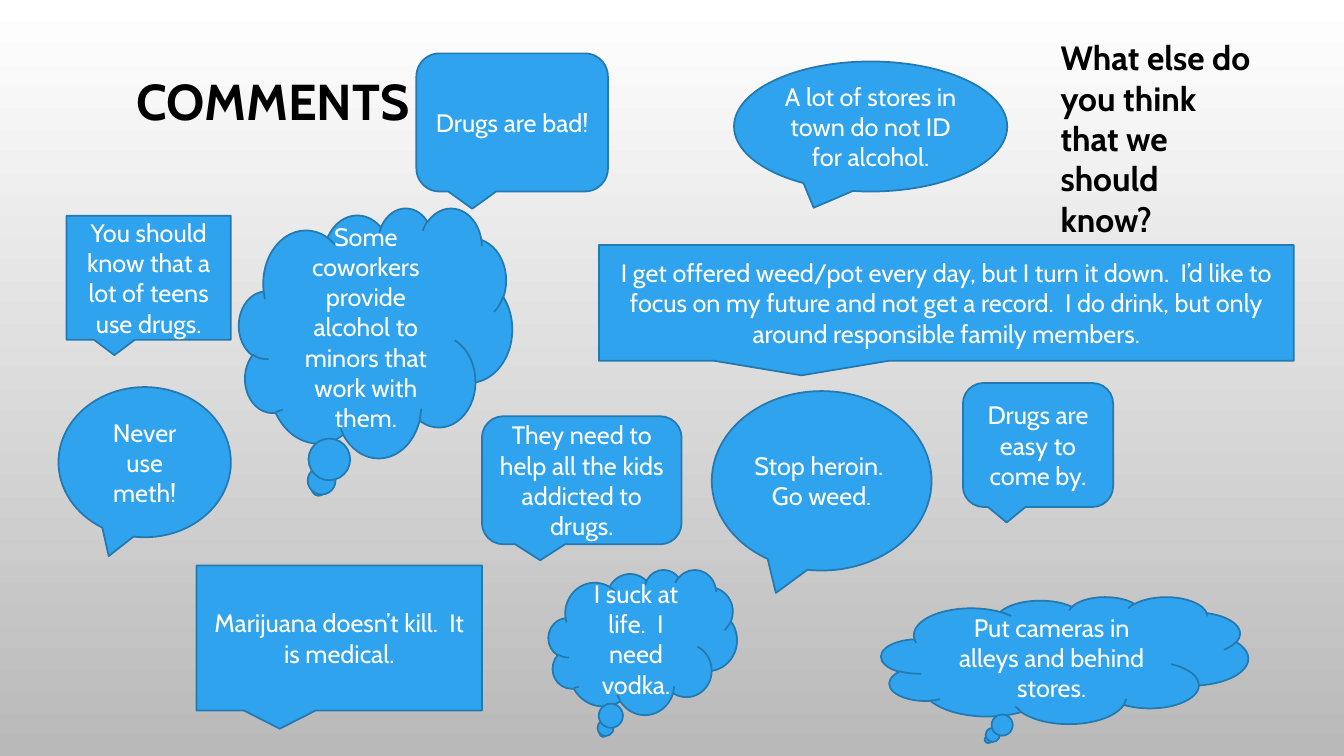
from typing import NamedTuple

import pptx
import pptx.dml.color
import pptx.enum.shapes
import pptx.enum.text
import pptx.util
from pptx.util import Inches

COLORS = {
    "bg_top": "FFFFFF",
    "bg_bottom": "B9B9B9",
    "bubble": "2FA3EE",
    "outline": "2379B0",
    "bubble_text": "FFFFFF",
    "heading": "000000",
}
FONT = "Cabin"

MSO = pptx.enum.shapes.MSO_SHAPE
RECT = MSO.RECTANGULAR_CALLOUT
ROUND = MSO.ROUNDED_RECTANGULAR_CALLOUT
OVAL = MSO.OVAL_CALLOUT
CLOUD = MSO.CLOUD_CALLOUT
ALIGN = pptx.enum.text.PP_ALIGN
ANCHOR = pptx.enum.text.MSO_ANCHOR


class Bubble(NamedTuple):
    kind: MSO
    left: float
    top: float
    width: float
    height: float
    text: str


BUBBLES = [
    Bubble(RECT, 0.66, 2.14, 1.63, 1.23, "You should know that a lot of teens use drugs."),
    Bubble(ROUND, 4.13, 0.53, 1.9, 1.37, "Drugs are bad!"),
    Bubble(OVAL, 7.28, 0.61, 2.71, 1.29, "A lot of stores in town do not ID for alcohol."),
    Bubble(CLOUD, 2.37, 2.06, 2.71, 2.48,
           "Some coworkers provide alcohol to minors that work with them."),
    Bubble(OVAL, 0.58, 3.84, 1.71, 1.49, "Never use meth!"),
    Bubble(RECT, 5.94, 2.43, 6.89, 1.15,
           "I get offered weed/pot every day, but I turn it down.  I’d like to focus on "
           "my future and not get a record.  I do drink, but only around responsible "
           "family members."),
    Bubble(ROUND, 4.78, 4.13, 1.98, 1.27, "They need to help all the kids addicted to drugs."),
    Bubble(CLOUD, 5.44, 5.65, 1.87, 1.44, "I suck at life.  I need vodka."),
    Bubble(OVAL, 7.06, 3.88, 2.18, 1.78, "Stop heroin.  Go weed."),
    Bubble(RECT, 1.95, 5.61, 2.83, 1.44, "Marijuana doesn’t kill.  It is medical."),
    Bubble(ROUND, 9.55, 3.8, 1.49, 1.23, "Drugs are easy to come by."),
    Bubble(CLOUD, 8.74, 5.92, 3.64, 1.26, "Put cameras in alleys and behind stores."),
]


def rgb(name: str) -> pptx.dml.color.RGBColor:
    return pptx.dml.color.RGBColor.from_string(COLORS[name])


def write(sp, text: str, size: int, color: str, align: ALIGN, anchor: ANCHOR,
          bold: bool = False):
    """Fill a shape with one wrapped paragraph and return the paragraph."""
    tf = sp.text_frame
    tf.word_wrap = True
    tf.auto_size = pptx.enum.text.MSO_AUTO_SIZE.NONE
    tf.vertical_anchor = anchor
    p = tf.paragraphs[0]
    p.text = text
    p.alignment = align
    p.font.name = FONT
    p.font.size = pptx.util.Pt(size)
    p.font.bold = bold
    p.font.color.rgb = rgb(color)
    return p


def add_bubble(slide, b: Bubble) -> None:
    sp = slide.shapes.add_shape(b.kind, Inches(b.left), Inches(b.top),
                                Inches(b.width), Inches(b.height))
    sp.shadow.inherit = False
    sp.fill.solid()
    sp.fill.fore_color.rgb = rgb("bubble")
    sp.line.color.rgb = rgb("outline")
    sp.line.width = pptx.util.Pt(1.25)
    write(sp, b.text, 18, "bubble_text", ALIGN.CENTER, ANCHOR.MIDDLE)


def set_background(slide) -> None:
    fill = slide.background.fill
    fill.gradient()
    fill.gradient_angle = 270  # counter-clockwise, so top to bottom
    for stop, name in zip(fill.gradient_stops, ("bg_top", "bg_bottom")):
        stop.color.rgb = rgb(name)


def main() -> None:
    prs = pptx.Presentation()
    prs.slide_width = Inches(13.33)
    prs.slide_height = Inches(7.5)
    slide = prs.slides.add_slide(prs.slide_layouts[5])
    set_background(slide)

    title = slide.shapes.title
    title.left, title.top = Inches(0.84), Inches(0.53)
    title.width, title.height = Inches(3.73), Inches(1.37)
    p = write(title, "COMMENTS", 36, "heading", ALIGN.CENTER, ANCHOR.TOP, bold=True)
    p.line_spacing = 1.2

    for bubble in BUBBLES:
        add_bubble(slide, bubble)

    question = slide.shapes.add_textbox(Inches(10.42), Inches(0.32),
                                        Inches(2.09), Inches(2.12))
    write(question, "What else do you think that we should know?", 24, "heading",
          ALIGN.LEFT, ANCHOR.TOP, bold=True)

    prs.save("out.pptx")


if __name__ == "__main__":
    main()
